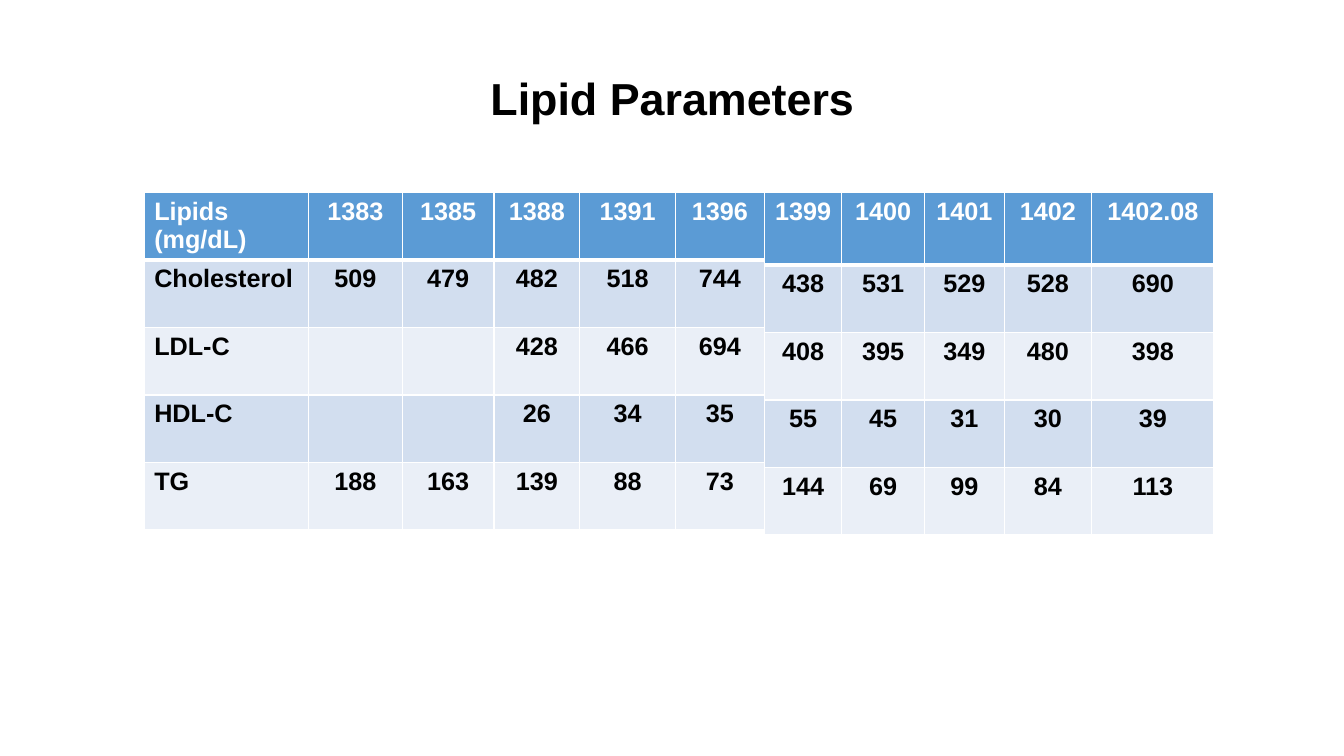
from dataclasses import dataclass

from lxml import etree
from pptx import Presentation
from pptx.dml.color import RGBColor
from pptx.enum.text import MSO_ANCHOR, PP_ALIGN
from pptx.oxml.ns import qn
from pptx.util import Inches, Pt

LEFT, CENTER = PP_ALIGN.LEFT, PP_ALIGN.CENTER
TOP = MSO_ANCHOR.TOP
WHITE, BLACK = "FFFFFF", "000000"
HEADER_FILL = "5B9BD5"
BAND_FILLS = ("D2DEEF", "EAEFF7")
TABLE_TOP = 1.91
ROW_HEIGHT = 0.67


@dataclass(frozen=True)
class LipidTable:
    left: float
    header_height: float
    column_widths: tuple[float, ...]
    rows: tuple[tuple[str, ...], ...]
    has_row_labels: bool = False


LIPID_TABLES = (
    LipidTable(
        left=1.43,
        header_height=0.67,
        column_widths=(1.63, 0.93, 0.91, 0.85, 0.95, 0.88),
        rows=(
            ("Lipids\n(mg/dL)", "1383", "1385", "1388", "1391", "1396"),
            ("Cholesterol", "509", "479", "482", "518", "744"),
            ("LDL-C", "", "", "428", "466", "694"),
            ("HDL-C", "", "", "26", "34", "35"),
            ("TG", "188", "163", "139", "88", "73"),
        ),
        has_row_labels=True,
    ),
    LipidTable(
        left=7.58,
        header_height=0.72,
        column_widths=(0.77, 0.82, 0.79, 0.87, 1.21),
        rows=(
            ("1399", "1400", "1401", "1402", "1402.08"),
            ("438", "531", "529", "528", "690"),
            ("408", "395", "349", "480", "398"),
            ("55", "45", "31", "30", "39"),
            ("144", "69", "99", "84", "113"),
        ),
    ),
)


def rgb(color: str) -> RGBColor:
    return RGBColor.from_string(color)


def write_text(text_frame, text: str, size: float, color: str, alignment) -> None:
    text_frame.text = text
    font_format = {"name": "Arial", "size": Pt(size), "bold": True}
    for paragraph in text_frame.paragraphs:
        paragraph.alignment = alignment
        for font in (paragraph.font, *(run.font for run in paragraph.runs)):
            for attribute, value in font_format.items():
                setattr(font, attribute, value)
            font.color.rgb = rgb(color)


def add_borders(cell, row_index: int) -> None:
    properties = cell._tc.get_or_add_tcPr()
    widths = {
        "lnL": 1,
        "lnR": 1,
        "lnT": 3 if row_index == 1 else 1,
        "lnB": 3 if row_index == 0 else 1,
    }
    for side, width in widths.items():
        line = etree.SubElement(properties, qn(f"a:{side}"), w=str(Pt(width)))
        fill = etree.SubElement(line, qn("a:solidFill"))
        etree.SubElement(fill, qn("a:srgbClr"), val=WHITE)


def add_lipid_table(slide, lipid_table: LipidTable) -> None:
    row_heights = [lipid_table.header_height] + [ROW_HEIGHT] * (len(lipid_table.rows) - 1)
    table = slide.shapes.add_table(
        len(lipid_table.rows),
        len(lipid_table.column_widths),
        Inches(lipid_table.left),
        Inches(TABLE_TOP),
        Inches(sum(lipid_table.column_widths)),
        Inches(sum(row_heights)),
    ).table
    for column, width in zip(table.columns, lipid_table.column_widths):
        column.width = Inches(width)
    for row, height in zip(table.rows, row_heights):
        row.height = Inches(height)
    for row_index, values in enumerate(lipid_table.rows):
        is_header = row_index == 0
        fill_color = HEADER_FILL if is_header else BAND_FILLS[(row_index - 1) % 2]
        for column_index, value in enumerate(values):
            cell = table.cell(row_index, column_index)
            is_label = lipid_table.has_row_labels and column_index == 0
            add_borders(cell, row_index)
            cell.fill.solid()
            cell.fill.fore_color.rgb = rgb(fill_color)
            write_text(
                cell.text_frame,
                value,
                18,
                WHITE if is_header else BLACK,
                LEFT if is_label else CENTER,
            )


def add_title(slide) -> None:
    title = slide.shapes.title
    position = {"left": 0.92, "top": 0.71, "width": 11.5, "height": 1.14}
    for attribute, value in position.items():
        setattr(title, attribute, Inches(value))
    title.text_frame.vertical_anchor = TOP
    write_text(title.text_frame, "Lipid Parameters", 32, BLACK, CENTER)
    title.text_frame.paragraphs[0].line_spacing = 0.9


def main() -> None:
    presentation = Presentation()
    presentation.slide_width = Inches(13.33)
    presentation.slide_height = Inches(7.5)
    slide = presentation.slides.add_slide(presentation.slide_layouts.get_by_name("Title Only"))
    add_title(slide)
    for lipid_table in LIPID_TABLES:
        add_lipid_table(slide, lipid_table)
    presentation.save("out.pptx")


if __name__ == "__main__":
    main()
